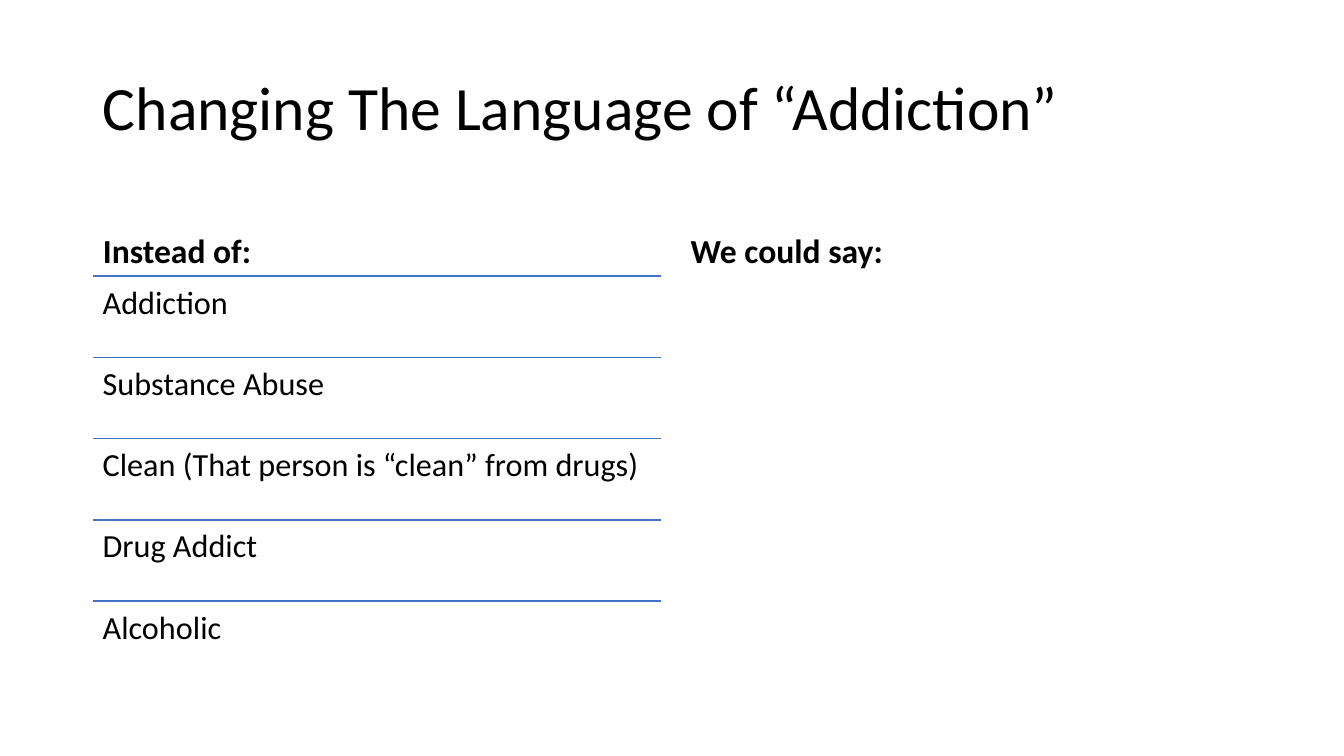
from pptx import Presentation
from pptx.dml.color import RGBColor
from pptx.enum.shapes import MSO_CONNECTOR
from pptx.enum.text import MSO_ANCHOR, MSO_AUTO_SIZE, PP_ALIGN
from pptx.oxml.ns import qn
from pptx.util import Inches, Pt
from lxml.etree import SubElement

# Content
TITLE = "Changing The Language of “Addiction”"
HEADINGS = {  # placeholder index: (text, left, width)
    1: ("Instead of:", 0.92, 5.64),
    3: ("We could say:", 6.75, 5.67),
}
TERMS = [
    "Addiction",
    "Substance Abuse",
    "Clean (That person is “clean” from drugs)",
    "Drug Addict",
    "Alcoholic",
]

# Layout and colours
LEFT, LIST_TOP, LIST_W, LIST_H = 0.92, 2.74, 5.64, 4.03
ROW_H = LIST_H / len(TERMS)
HEAD_TOP, HEAD_H = 1.84, 0.9
BLACK, BLUE = "000000", "4472C4"


def color(value):
    return RGBColor.from_string(value)


def place(shape, *box):
    for name, value in zip(("left", "top", "width", "height"), box):
        setattr(shape, name, Inches(value))


def write(shape, text, anchor, size, bold=False, before=0, inset_y=0.05):
    tf = shape.text_frame
    frame = {"word_wrap": True, "auto_size": MSO_AUTO_SIZE.NONE,
             "vertical_anchor": anchor,
             "margin_left": Inches(0.1), "margin_right": Inches(0.1),
             "margin_top": Inches(inset_y), "margin_bottom": Inches(inset_y)}
    for name, value in frame.items():
        setattr(tf, name, value)
    p = tf.paragraphs[0]
    paragraph = {"alignment": PP_ALIGN.LEFT, "line_spacing": 0.9,
                 "space_before": Pt(before)}
    for name, value in paragraph.items():
        setattr(p, name, value)
    r = p.add_run()
    r.text = text
    font = {"name": "Calibri", "size": Pt(size), "bold": bold}
    for name, value in font.items():
        setattr(r.font, name, value)
    r.font.color.rgb = color(BLACK)


prs = Presentation()
prs.slide_width, prs.slide_height = Inches(13.33), Inches(7.5)
s = prs.slides.add_slide(prs.slide_layouts.get_by_name("Comparison"))

# Title
place(s.shapes.title, LEFT, 0.37, 11.5, 1.45)
write(s.shapes.title, TITLE, MSO_ANCHOR.MIDDLE, 44)

# Column headings; the unused content placeholders go
for sp in list(s.placeholders):
    idx = sp.placeholder_format.idx
    if idx in HEADINGS:
        text, left, width = HEADINGS[idx]
        place(sp, left, HEAD_TOP, width, HEAD_H)
        write(sp, text, MSO_ANCHOR.BOTTOM, 24, bold=True, before=10)
    elif idx != 0:
        sp.element.getparent().remove(sp.element)

# Ruled list of terms
for i, term in enumerate(TERMS):
    top = LIST_TOP + i * ROW_H
    rule = s.shapes.add_connector(
        MSO_CONNECTOR.STRAIGHT, Inches(LEFT), Inches(top),
        Inches(LEFT + LIST_W), Inches(top))
    rule.line.color.rgb = color(BLUE)
    rule.line.width = Pt(1)
    SubElement(rule.element.spPr, qn("a:effectLst"))
    box = s.shapes.add_textbox(
        Inches(LEFT), Inches(top), Inches(LIST_W), Inches(ROW_H))
    write(box, term, MSO_ANCHOR.TOP, 23, inset_y=0.1)

prs.save("out.pptx")
